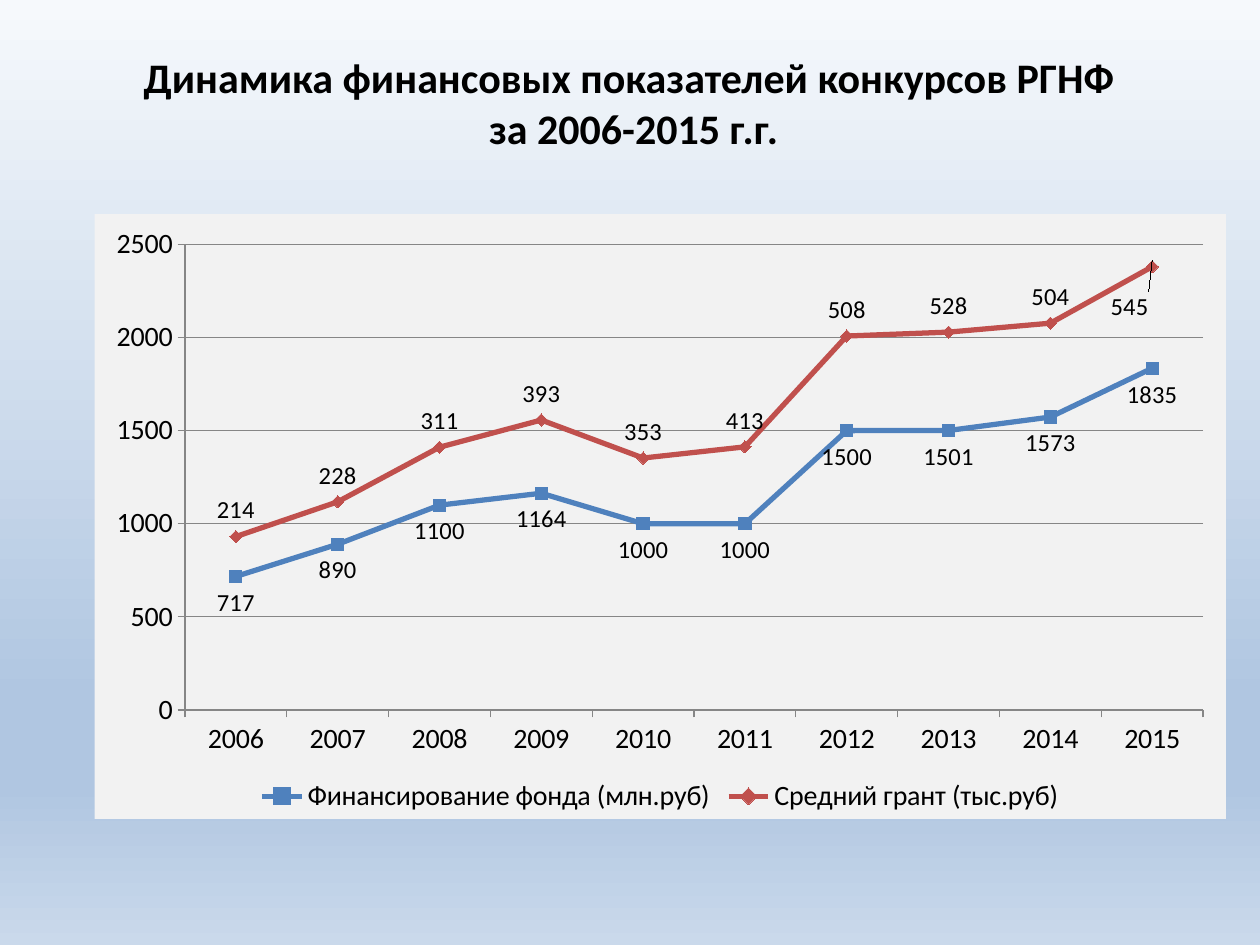
from lxml.etree import SubElement
from pptx import Presentation
from pptx.chart.data import CategoryChartData
from pptx.dml.color import RGBColor
from pptx.enum.chart import XL_CHART_TYPE, XL_LABEL_POSITION, XL_LEGEND_POSITION, XL_MARKER_STYLE, XL_TICK_MARK
from pptx.enum.text import MSO_ANCHOR, PP_ALIGN
from pptx.oxml import parse_xml
from pptx.oxml.ns import nsdecls, qn
from pptx.util import Pt

COLORS = {"text": "000000", "panel": "F2F2F2", "axis": "868686", "funding": "4F81BD", "grant": "C0504D"}
SKY = [(0, "F6F9FC"), (74, "B0C6E1"), (83, "B0C6E1"), (100, "CAD9EB")]
YEARS = [str(year) for year in range(2006, 2016)]
INDICATORS = [
    {"name": "Финансирование фонда (млн.руб)", "color": "funding",
     "values": [717, 890, 1100, 1164, 1000, 1000, 1500, 1501, 1573, 1835],
     "marker": XL_MARKER_STYLE.SQUARE, "label": XL_LABEL_POSITION.BELOW},
    {"name": "Средний грант (тыс.руб)", "color": "grant",
     "values": [214, 228, 311, 393, 353, 413, 508, 528, 504, 545],
     "marker": XL_MARKER_STYLE.DIAMOND, "label": XL_LABEL_POSITION.ABOVE},
]


def assign(target, values):
    for name, value in values.items():
        setattr(target, name, value)


def manual_layout(**settings):
    layout = parse_xml(f"<c:layout {nsdecls('c')}/>")
    manual = SubElement(layout, qn("c:manualLayout"))
    for name, value in settings.items():
        SubElement(manual, qn(f"c:{name}")).set("val", str(value))
    return layout


class FinanceSlide:
    """Hold the style and the current slide of the finance deck."""

    def __init__(self, deck, font="Calibri"):
        self.slide = deck.slides.add_slide(deck.slide_layouts[6])
        self.font = font

    def style_font(self, font, size, **extra):
        assign(font, {"name": self.font, "size": Pt(size), **extra})
        font.color.rgb = RGBColor.from_string(COLORS["text"])

    def style_line(self, line, color, width):
        line.color.rgb = RGBColor.from_string(COLORS[color])
        line.width = Pt(width)

    def background(self, stops):
        fill = self.slide.background.fill
        fill.gradient()
        fill.gradient_angle = 270
        stop_list = next(self.slide.element.iter(qn("a:gsLst")))
        for stop in list(stop_list):
            stop_list.remove(stop)
        for position, color in stops:
            stop = SubElement(stop_list, qn("a:gs"), pos=str(position * 1000))
            SubElement(stop, qn("a:srgbClr"), val=color)

    def title(self, text, box, size):
        frame = self.slide.shapes.add_textbox(*map(Pt, box)).text_frame
        assign(frame, {"word_wrap": True, "vertical_anchor": MSO_ANCHOR.MIDDLE})
        heading = frame.paragraphs[0]
        assign(heading, {"text": text, "alignment": PP_ALIGN.CENTER})
        for run in heading.runs:
            self.style_font(run.font, size, bold=True)

    def line_chart(self, years, indicators, box):
        data = CategoryChartData()
        data.categories = years
        for indicator in indicators:
            data.add_series(indicator["name"], indicator["values"])
        chart = self.slide.shapes.add_chart(
            XL_CHART_TYPE.LINE_MARKERS_STACKED, *map(Pt, box), data).chart
        assign(chart, {"has_title": False, "has_legend": True})
        self.style_font(chart.font, 10)
        assign(chart.legend, {"position": XL_LEGEND_POSITION.BOTTOM, "include_in_layout": False})
        self.style_font(chart.legend.font, 16)
        for axis in (chart.category_axis, chart.value_axis):
            assign(axis, {"major_tick_mark": XL_TICK_MARK.OUTSIDE, "minor_tick_mark": XL_TICK_MARK.NONE})
            self.style_font(axis.tick_labels.font, 16)
            self.style_line(axis.format.line, "axis", 0.75)
        assign(chart.value_axis, {"minimum_scale": 0, "maximum_scale": 2500,
                                  "major_unit": 500, "has_major_gridlines": True})
        self.style_line(chart.value_axis.major_gridlines.format.line, "axis", 0.75)
        chart.plots[0].vary_by_categories = False
        for series, indicator in zip(chart.plots[0].series, indicators):
            self.series(series, indicator)
        self.panel(chart)
        return chart

    def series(self, series, indicator):
        series.smooth = False
        self.style_line(series.format.line, indicator["color"], 3)
        assign(series.marker, {"style": indicator["marker"], "size": 7})
        series.marker.format.fill.solid()
        series.marker.format.fill.fore_color.rgb = RGBColor.from_string(COLORS[indicator["color"]])
        self.style_line(series.marker.format.line, indicator["color"], 0.75)
        assign(series.data_labels, {"show_value": True, "position": indicator["label"]})
        self.style_font(series.data_labels.font, 14)

    def panel(self, chart):
        plot_area = chart.element.chart.plotArea
        for layout in plot_area.findall(qn("c:layout")):
            plot_area.remove(layout)
        plot_area.insert(0, manual_layout(layoutTarget="inner", xMode="edge", yMode="edge",
                                          x=0.08, y=0.05, w=0.9, h=0.77))
        chart.element.chart.addnext(parse_xml(
            f"<c:spPr {nsdecls('c', 'a')}><a:solidFill><a:srgbClr val=\"{COLORS['panel']}\"/>"
            "</a:solidFill><a:ln><a:noFill/></a:ln></c:spPr>"))

    def shift_label(self, series, index, x, y):
        label = series.points[index].data_label
        self.style_font(label.font, 14)
        label.position = XL_LABEL_POSITION.ABOVE
        next(series.data_labels._element.iter(qn("c:dLbl"))).find(qn("c:idx")).addnext(
            manual_layout(x=x, y=y))


def main():
    deck = Presentation()
    assign(deck, {"slide_width": Pt(720), "slide_height": Pt(540)})
    finance = FinanceSlide(deck)
    finance.background(SKY)
    finance.title("Динамика финансовых показателей конкурсов РГНФ \vза 2006-2015 г.г.",
                  (29.5, 11.5, 665.3, 93.6), 24)
    chart = finance.line_chart(YEARS, INDICATORS, (54, 122.4, 646.5, 345.6))
    finance.shift_label(chart.plots[0].series[1], len(YEARS) - 1, -0.02, 0.11)
    deck.save("out.pptx")


if __name__ == "__main__":
    main()
